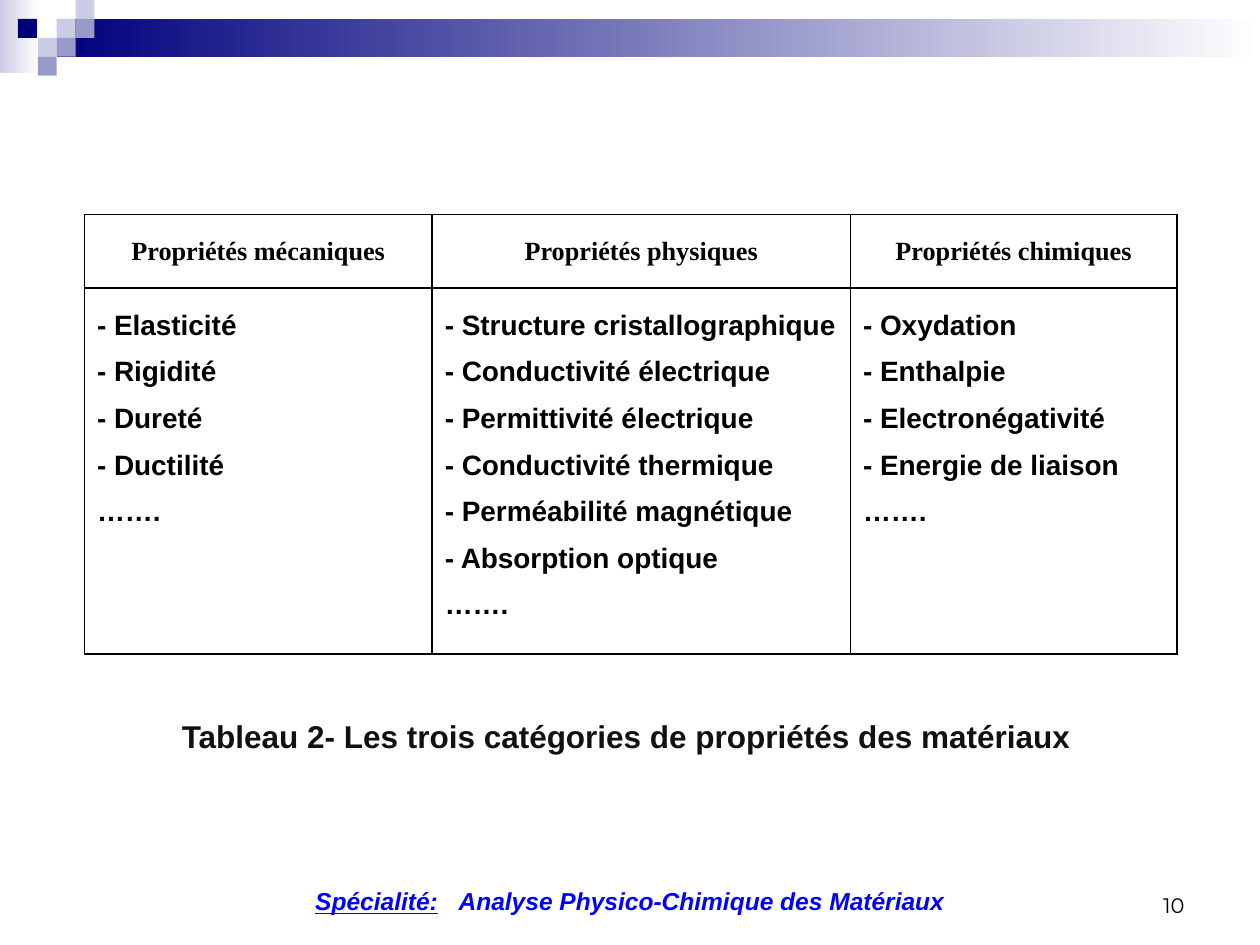
from lxml import etree
from pptx import Presentation
from pptx.dml.color import RGBColor
from pptx.enum.shapes import MSO_SHAPE
from pptx.enum.text import MSO_ANCHOR, PP_ALIGN
from pptx.oxml.ns import qn
from pptx.util import Inches, Pt

RECTANGLE = MSO_SHAPE.RECTANGLE
LEFT, CENTER, RIGHT = PP_ALIGN.LEFT, PP_ALIGN.CENTER, PP_ALIGN.RIGHT
TOP, MIDDLE, BOTTOM = MSO_ANCHOR.TOP, MSO_ANCHOR.MIDDLE, MSO_ANCHOR.BOTTOM

WHITE = RGBColor(0xFF, 0xFF, 0xFF)
BLACK = RGBColor(0x00, 0x00, 0x00)
INK = RGBColor(0x11, 0x11, 0x11)
NAVY = RGBColor(0x00, 0x00, 0x7D)
LILAC = RGBColor(0xCC, 0xCC, 0xE6)
LAVENDER = RGBColor(0x99, 0x99, 0xCC)
BLUE = RGBColor(0x00, 0x00, 0xFF)

# One mosaic tile, as shares of the slide's width and height
TILE_WIDTH, TILE_HEIGHT = 0.015, 0.02
TITLE_ONLY = 5


class SlideBuilder:
    def __init__(self, deck):
        self.deck = deck
        self.slide = deck.slides.add_slide(deck.slide_layouts[TITLE_ONLY])

    def place(self, left, top, width, height):
        """Turn shares of the slide into lengths."""
        across, down = self.deck.slide_width, self.deck.slide_height
        return (round(left * across), round(top * down),
                round(width * across), round(height * down))

    def style(self, para, size, color, name="Arial", align=LEFT, bold=True, italic=False):
        para.alignment = align
        font = para.font
        font.name, font.size, font.bold, font.italic = name, Pt(size), bold, italic
        font.color.rgb = color

    def block(self, share, color, fade=False):
        box = self.slide.shapes.add_shape(RECTANGLE, *self.place(*share))
        box.shadow.inherit = False
        box.line.fill.background()
        if fade:
            box.fill.gradient()
            box.fill.gradient_angle = 0
            for stop, shade in zip(box.fill.gradient_stops, (color, WHITE)):
                stop.color.rgb = shade
        else:
            box.fill.solid()
            box.fill.fore_color.rgb = color

    def tile(self, column, row, color):
        self.block((column * TILE_WIDTH, row * TILE_HEIGHT, TILE_WIDTH, TILE_HEIGHT), color)

    def title(self, share, text, size, color):
        box = self.slide.shapes.title
        box.left, box.top, box.width, box.height = self.place(*share)
        box.text_frame.text = text
        box.text_frame.vertical_anchor = MIDDLE
        self.style(box.text_frame.paragraphs[0], size, color, align=CENTER)

    def text(self, share, texts, anchor=TOP, **style):
        """Add a one-line text box and return its spans."""
        frame = self.slide.shapes.add_textbox(*self.place(*share)).text_frame
        frame.word_wrap = True
        frame.vertical_anchor = anchor
        para = frame.paragraphs[0]
        self.style(para, **style)
        spans = []
        for text in texts:
            span = para.add_run()
            span.text = text
            spans.append(span)
        return spans

    def borders(self, cell):
        properties = cell._tc.get_or_add_tcPr()
        for index, side in enumerate(("lnL", "lnR", "lnT", "lnB")):
            line = etree.Element(qn(f"a:{side}"), w=str(Pt(1)))
            fill = etree.SubElement(line, qn("a:solidFill"))
            etree.SubElement(fill, qn("a:srgbClr"), val=str(BLACK))
            properties.insert(index, line)

    def table(self, share, columns, row_shares, column_shares):
        grid = self.slide.shapes.add_table(2, len(columns), *self.place(*share)).table
        grid.first_row = grid.horz_banding = False
        for row, height in zip(grid.rows, row_shares):
            row.height = round(height * self.deck.slide_height)
        for index, (heading, items) in enumerate(columns.items()):
            grid.columns[index].width = round(column_shares[index] * self.deck.slide_width)
            head, body = grid.cell(0, index), grid.cell(1, index)
            head.text, body.text = heading, "\n".join(items)
            head.vertical_anchor, body.vertical_anchor = MIDDLE, TOP
            self.style(head.text_frame.paragraphs[0], 15, BLACK, "Times New Roman", CENTER)
            for para in body.text_frame.paragraphs:
                para.line_spacing = 1.5
                self.style(para, 16, BLACK)
            for cell in (head, body):
                cell.fill.background()
                self.borders(cell)


def main():
    deck = Presentation()
    deck.slide_width, deck.slide_height = Inches(10), Inches(7.5)
    page = SlideBuilder(deck)

    # Header band and mosaic
    page.block((0, 0, 0.031, 0.077), LILAC, fade=True)
    page.block((0.045, 0.02, 0.955, 0.04), NAVY, fade=True)
    for column, row, color in (
        (3, 1, LILAC), (4, 0, LILAC), (4, 1, LAVENDER), (2, 2, LILAC),
        (0.95, 1, NAVY), (3, 2, LAVENDER), (2, 3, LAVENDER),
    ):
        page.tile(column, row, color)

    # Table of properties and its caption
    more = "……."
    properties = {
        "Propriétés mécaniques": [
            "- Elasticité", "- Rigidité", "- Dureté", "- Ductilité", more],
        "Propriétés physiques": [
            "- Structure cristallographique", "- Conductivité électrique",
            "- Permittivité électrique", "- Conductivité thermique",
            "- Perméabilité magnétique", "- Absorption optique", more],
        "Propriétés chimiques": [
            "- Oxydation", "- Enthalpie", "- Electronégativité",
            "- Energie de liaison", more],
    }
    page.table((0.067, 0.227, 0.867, 0.465), properties,
               row_shares=(0.078, 0.387), column_shares=(0.276, 0.332, 0.259))
    page.title((0.047, 0.744, 0.9, 0.07),
               "Tableau 2- Les trois catégories de propriétés des matériaux", 18, INK)

    # Footer: speciality and page number
    label, gap, _ = page.text(
        (0.002, 0.931, 0.996, 0.045),
        ("Spécialité:", " ", "Analyse Physico-Chimique des Matériaux"),
        size=14, color=BLUE, align=CENTER, italic=True)
    label.font.underline = True
    gap._r.get_or_add_rPr().set("spc", "780")  # widens the single space
    page.text((0.717, 0.911, 0.233, 0.067), ("10",), anchor=BOTTOM,
              size=12, color=BLACK, name="Montserrat", align=RIGHT, bold=False)

    deck.save("out.pptx")


if __name__ == "__main__":
    main()
